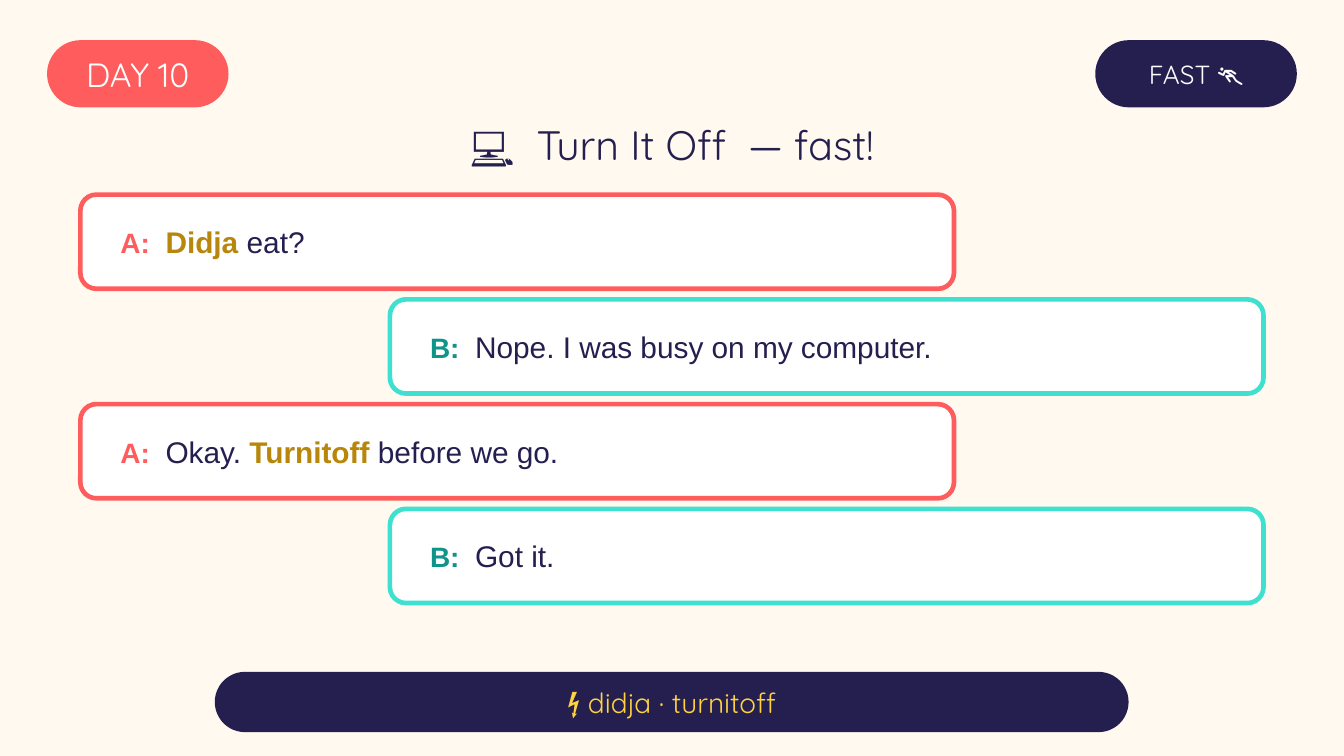
import dataclasses

import pptx
import pptx.dml.color
import pptx.enum.shapes
import pptx.enum.text
import pptx.util

Cm = pptx.util.Cm
Align = pptx.enum.text.PP_ALIGN


@dataclasses.dataclass(frozen=True)
class Theme:
    # Colours
    cream: str = "FFF9EF"
    navy: str = "241F4E"
    coral: str = "FF5D5D"
    aqua: str = "3EE0CF"
    teal: str = "0E9488"
    gold: str = "B8860B"
    yellow: str = "FFD23F"
    white: str = "FFFFFF"
    # Fonts and type sizes
    head: str = "Quicksand"
    body: str = "Arial"
    title: int = 22
    day: int = 18
    talk: int = 16
    label: int = 15
    pace: int = 14


THEME = Theme()


def rgb(code):
    return pptx.dml.color.RGBColor.from_string(code)


def write(para, text, font=THEME.body, size=THEME.talk, color=THEME.navy, bold=False):
    """Add one run with its format to a paragraph."""
    run = para.add_run()
    run.text = text
    run.font.name = font
    run.font.size = pptx.util.Pt(size)
    run.font.color.rgb = rgb(color)
    run.font.bold = bold


def set_up(shape, align, inset=0):
    """Prepare the text frame and return its first paragraph."""
    frame = shape.text_frame
    frame.word_wrap = True
    frame.vertical_anchor = pptx.enum.text.MSO_ANCHOR.MIDDLE
    frame.margin_left = frame.margin_right = Cm(inset)
    frame.margin_top = frame.margin_bottom = 0
    para = frame.paragraphs[0]
    para.alignment = align
    return para


def add_round(slide, box, fill, curve, line=None):
    kind = pptx.enum.shapes.MSO_SHAPE.ROUNDED_RECTANGLE
    shape = slide.shapes.add_shape(kind, *map(Cm, box))
    shape.adjustments[0] = curve
    shape.shadow.inherit = False
    shape.fill.solid()
    shape.fill.fore_color.rgb = rgb(fill)
    if line:
        shape.line.color.rgb = rgb(line)
        shape.line.width = pptx.util.Pt(2.5)
    else:
        shape.line.fill.background()
    return shape


def add_pill(slide, box, text, fill, size, color=THEME.white):
    shape = add_round(slide, box, fill, 0.5)
    para = set_up(shape, Align.CENTER)
    write(para, text, font=THEME.head, size=size, color=color)


def add_title(slide, text):
    box = slide.shapes.add_textbox(0, Cm(2.08), Cm(25.4), Cm(1.27))
    para = set_up(box, Align.CENTER)
    write(para, text, font=THEME.head, size=THEME.title)


def add_talk(slide, row, who, parts):
    """Add a speech card; every second part is a key word."""
    left, line, tint = {
        "A": (1.52, THEME.coral, THEME.coral),
        "B": (7.37, THEME.aqua, THEME.teal),
    }[who]
    box = (left, 3.68 + 1.98 * row, 16.51, 1.78)
    shape = add_round(slide, box, THEME.white, 0.17, line)
    para = set_up(shape, Align.LEFT, inset=0.67)
    write(para, f"{who}:  ", size=THEME.label, color=tint, bold=True)
    for spot, part in enumerate(parts):
        key = spot % 2 == 1
        if part:
            write(para, part, color=THEME.gold if key else THEME.navy, bold=key)


def main():
    deck = pptx.Presentation()
    deck.slide_width, deck.slide_height = Cm(25.4), Cm(14.29)
    slide = deck.slides.add_slide(deck.slide_layouts[6])
    slide.background.fill.solid()
    slide.background.fill.fore_color.rgb = rgb(THEME.cream)

    # Header
    add_pill(slide, (0.89, 0.76, 3.43, 1.27), "DAY 10", THEME.coral, THEME.day)
    add_pill(slide, (20.7, 0.76, 3.81, 1.27), "FAST 🏃", THEME.navy, THEME.pace)
    add_title(slide, "💻  Turn It Off  — fast!")

    # Dialogue
    talks = [
        ("A", ["", "Didja", " eat?"]),
        ("B", ["Nope. I was busy on my computer."]),
        ("A", ["Okay. ", "Turnitoff", " before we go."]),
        ("B", ["Got it."]),
    ]
    for row, (who, parts) in enumerate(talks):
        add_talk(slide, row, who, parts)

    # Footer
    add_pill(slide, (4.06, 12.7, 17.27, 1.14), "⚡ didja · turnitoff",
             THEME.navy, THEME.label, THEME.yellow)

    deck.save("out.pptx")


if __name__ == "__main__":
    main()
